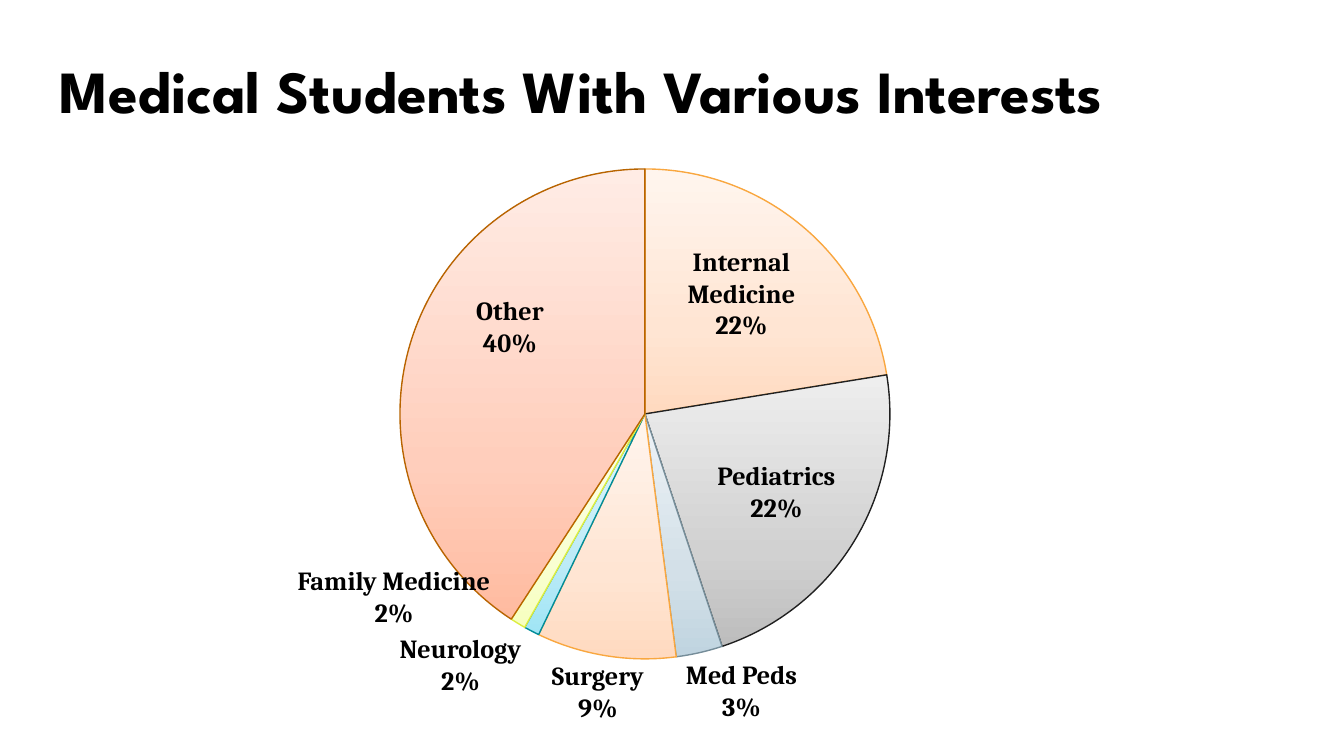
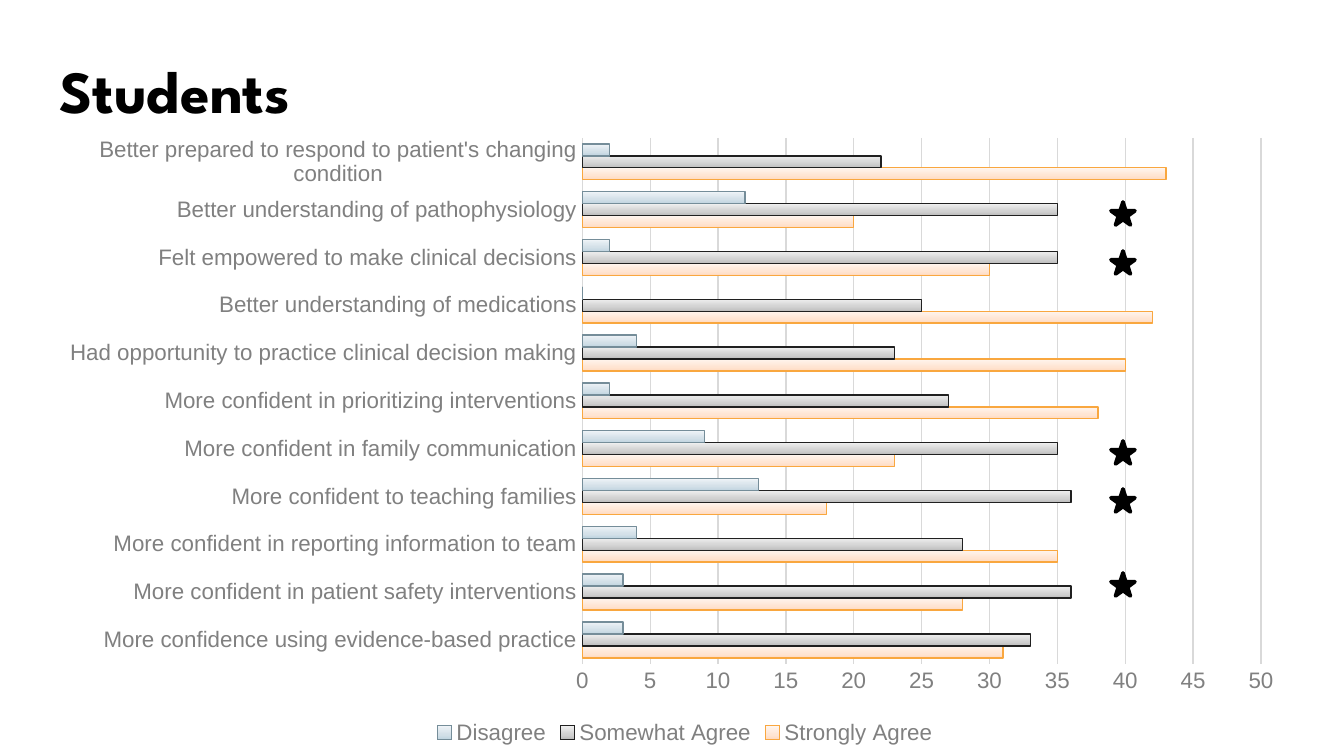
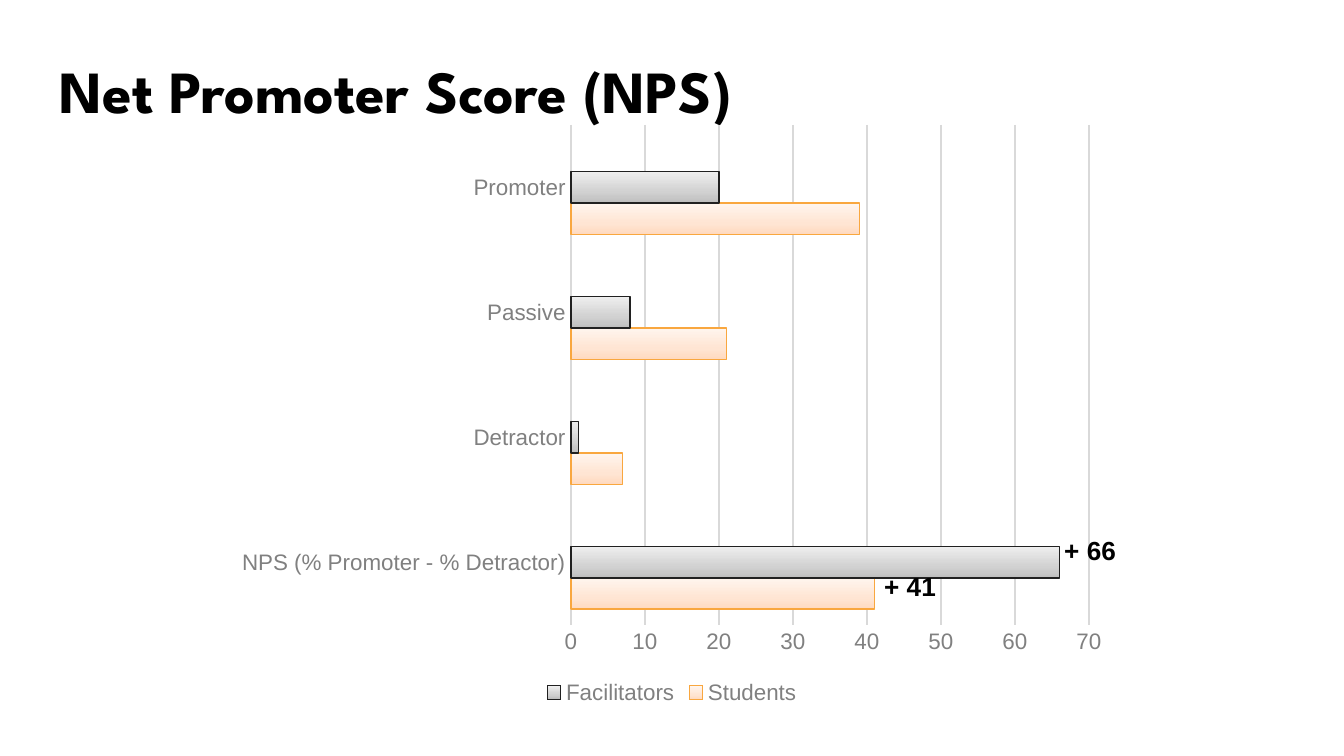
from copy import deepcopy
from dataclasses import dataclass
from typing import NamedTuple

from lxml import etree
from pptx import Presentation
from pptx import util as u
from pptx.chart.data import CategoryChartData
from pptx.dml.color import RGBColor
from pptx.enum import chart as charts, shapes, text
from pptx.oxml.ns import qn

EMU_PER_PX = 914400 / 134.4


def px(length):
    return u.Emu(round(length * EMU_PER_PX))


def rgb(code):
    return RGBColor.from_string(code)


class Tint(NamedTuple):
    """Gradient colours from bottom to top, and the outline."""
    bottom: str
    middle: str
    top: str
    line: str


@dataclass(frozen=True)
class Theme:
    # Colours
    ink: str = "000000"
    axis_text: str = "808080"
    grid: str = "D9D9D9"
    orange: Tint = Tint("FFDAC0", "FFE5D3", "FFF5EE", "F9A73F")
    grey: Tint = Tint("BDBDBD", "D1D1D1", "EEEEEE", "202020")
    blue: Tint = Tint("C0D4E0", "D3E0E8", "EEF3F7", "758D99")
    teal: Tint = Tint("A0E5F5", "BEEBF7", "E5F8FD", "008C99")
    yellow: Tint = Tint("F7FFC0", "F9FFD3", "FDFFEE", "DDEE40")
    red: Tint = Tint("FFBBA0", "FFCEBC", "FFECE5", "B86400")
    # Fonts and sizes
    title_font: str = "League Spartan"
    label_font: str = "Cambria"
    chart_font: str = "Arial"
    title_size: int = 32
    label_size: int = 14
    axis_size: int = 12
    chart_size: int = 10
    thin: float = 0.75
    star_line: float = 2


class Slides:
    def __init__(self, theme):
        self.theme = theme
        self.deck = Presentation()
        self.deck.slide_width, self.deck.slide_height = px(1344), px(756)
        self.page = None

    def style(self, font, name, size, color, bold=False):
        font.name, font.size, font.bold = name, u.Pt(size), bold
        font.color.rgb = rgb(color)

    def new_page(self, title):
        self.page = self.deck.slides.add_slide(self.deck.slide_layouts[5])
        box = self.page.shapes.title
        box.left, box.top, box.width, box.height = map(px, (46, 40, 1298, 85))
        frame = box.text_frame
        frame.text = title
        frame.word_wrap = True
        frame.auto_size = text.MSO_AUTO_SIZE.NONE
        frame.vertical_anchor = text.MSO_ANCHOR.TOP
        frame.margin_left = frame.margin_right = u.Inches(0.1)
        frame.margin_top = frame.margin_bottom = u.Inches(0.1)
        para = frame.paragraphs[0]
        para.alignment = text.PP_ALIGN.LEFT
        self.style(para.font, self.theme.title_font, self.theme.title_size,
                   self.theme.ink, bold=True)

    def label(self, lines, area, font, align=text.PP_ALIGN.LEFT, wrap=False):
        box = self.page.shapes.add_textbox(*map(px, area))
        frame = box.text_frame
        frame.word_wrap = wrap
        frame.auto_size = text.MSO_AUTO_SIZE.SHAPE_TO_FIT_TEXT
        frame.text = "\n".join(lines)
        for para in frame.paragraphs:
            para.alignment = align
            self.style(para.font, font, self.theme.label_size,
                       self.theme.ink, bold=True)

    def star(self, left, top):
        star = self.page.shapes.add_shape(
            shapes.MSO_SHAPE.STAR_5_POINT, *map(px, (left, top, 24, 23)))
        star.shadow.inherit = False
        star.fill.solid()
        star.fill.fore_color.rgb = rgb(self.theme.ink)
        star.line.color.rgb = rgb(self.theme.ink)
        star.line.width = u.Pt(self.theme.star_line)

    def paint(self, look, tint):
        look.fill.gradient()
        look.fill.gradient_angle = 90
        stop_list = look.element.xpath(".//a:gsLst")[0]
        stop_list.append(deepcopy(stop_list[-1]))
        for stop, place, color in zip(look.fill.gradient_stops, (0, 0.35, 1), tint):
            stop.position = place
            stop.color.rgb = rgb(color)
        look.line.color.rgb = rgb(tint.line)
        look.line.width = u.Pt(self.theme.thin)

    def place_plot(self, chart, area, plot):
        """Fix the inner plot area, given in slide px, inside the chart."""
        left, top, width, height = area
        plot_area = chart.element.xpath(".//c:plotArea")[0]
        for old in plot_area.findall(qn("c:layout")):
            plot_area.remove(old)
        layout = etree.Element(qn("c:layout"))
        plot_area.insert(0, layout)
        manual = etree.SubElement(layout, qn("c:manualLayout"))
        values = {
            "layoutTarget": "inner", "xMode": "edge", "yMode": "edge",
            "x": (plot[0] - left) / width, "y": (plot[1] - top) / height,
            "w": plot[2] / width, "h": plot[3] / height,
        }
        for name, value in values.items():
            etree.SubElement(manual, qn(f"c:{name}")).set("val", str(value))

    def chart(self, kind, categories, series, area, plot):
        data = CategoryChartData()
        data.categories = categories
        for name, values in series:
            data.add_series(name, values)
        chart = self.page.shapes.add_chart(kind, *map(px, area), data).chart
        chart.has_title = False
        chart.has_legend = False
        self.style(chart.font, self.theme.chart_font, self.theme.chart_size,
                   self.theme.ink)
        self.place_plot(chart, area, plot)
        return chart

    def pie(self, values, tints, area, plot):
        names = [str(number) for number in range(1, len(values) + 1)]
        chart = self.chart(charts.XL_CHART_TYPE.PIE, names,
                           [("Series 1", values)], area, plot)
        chart.plots[0].vary_by_categories = True
        for index, tint in enumerate(tints):
            self.paint(chart.plots[0].series[0].points[index].format, tint)

    def bars(self, categories, series, area, plot, top_value, step):
        theme = self.theme
        chart = self.chart(charts.XL_CHART_TYPE.BAR_CLUSTERED, categories,
                           series, area, plot)
        bar_plot = chart.plots[0]
        bar_plot.gap_width = 100
        bar_plot.vary_by_categories = False
        for one, tint in zip(bar_plot.series, (theme.orange, theme.grey, theme.blue)):
            self.paint(one.format, tint)

        # Axes
        names, scale = chart.category_axis, chart.value_axis
        scale.minimum_scale, scale.maximum_scale = 0, top_value
        scale.major_unit = step
        scale.has_major_gridlines = True
        for line in (names.format.line, scale.major_gridlines.format.line):
            line.color.rgb = rgb(theme.grid)
            line.width = u.Pt(theme.thin)
        scale.format.line.fill.background()
        for axis in (names, scale):
            axis.major_tick_mark = charts.XL_TICK_MARK.NONE
            axis.minor_tick_mark = charts.XL_TICK_MARK.NONE

        # Legend
        chart.has_legend = True
        chart.legend.position = charts.XL_LEGEND_POSITION.BOTTOM
        chart.legend.include_in_layout = False
        for part in (names.tick_labels, scale.tick_labels, chart.legend):
            self.style(part.font, theme.chart_font, theme.axis_size,
                       theme.axis_text)
        return chart

    def hide_legend_entry(self, chart, index):
        entry = etree.Element(qn("c:legendEntry"))
        etree.SubElement(entry, qn("c:idx")).set("val", str(index))
        etree.SubElement(entry, qn("c:delete")).set("val", "1")
        chart.element.xpath(".//c:legendPos")[0].addnext(entry)


def interests(slides):
    theme = slides.theme
    slides.new_page("Medical Students With Various Interests")
    slides.pie(
        (22, 22, 3, 9, 1, 1, 40),
        (theme.orange, theme.grey, theme.blue, theme.orange,
         theme.teal, theme.yellow, theme.red),
        area=(267, 151, 755, 527), plot=(400, 169, 490, 490))
    slice_labels = [
        (("Internal", "Medicine", "22%"), (665, 239, 153, 109)),
        (("Pediatrics", "22%"), (694, 453, 165, 77)),
        (("Surgery", "9%"), (531, 653, 134, 77)),
        (("Med Peds", "3%"), (663, 652, 157, 77)),
        (("Neurology", "2%"), (376, 626, 169, 77)),
        (("Family Medicine", "2%"), (265, 558, 258, 77)),
        (("Other", "40%"), (457, 288, 106, 77)),
    ]
    for lines, area in slice_labels:
        slides.label(lines, area, theme.label_font, text.PP_ALIGN.CENTER,
                     wrap=lines[0] == "Family Medicine")


def student_answers(slides):
    slides.new_page("Students")
    statements = [
        "More confidence using evidence-based practice",
        "More confident in patient safety interventions",
        "More confident in reporting information to team",
        "More confident to teaching families",
        "More confident in family communication",
        "More confident in prioritizing interventions",
        "Had opportunity to practice clinical decision making",
        "Better understanding of medications",
        "Felt empowered to make clinical decisions",
        "Better understanding of pathophysiology",
        "Better prepared to respond to patient's changing condition",
    ]
    answers = [
        ("Strongly Agree", (31, 28, 35, 18, 23, 38, 40, 42, 30, 20, 43)),
        ("Somewhat Agree", (33, 36, 28, 36, 35, 27, 23, 25, 35, 35, 22)),
        ("Disagree", (3, 3, 4, 13, 9, 2, 4, 0, 2, 12, 2)),
    ]
    slides.bars(statements, answers, area=(70, 125, 1228, 625),
                plot=(581, 138, 680, 526), top_value=50, step=5)
    for top in (202, 251, 441, 489, 573):
        slides.star(1111, top)


def promoter_score(slides):
    slides.new_page("Net Promoter Score (NPS)")
    groups = ["NPS (% Promoter - % Detractor)", "Detractor", "Passive", "Promoter"]
    scores = [
        ("Students", (41, 7, 21, 39)),
        ("Facilitators", (66, 1, 8, 20)),
        ("Column1", (None,) * len(groups)),
    ]
    chart = slides.bars(groups, scores, area=(224, 113, 896, 597),
                        plot=(571, 125, 518, 500), top_value=70, step=10)
    slides.hide_legend_entry(chart, 0)
    for score, left, top in (("+ 41", 871, 564), ("+ 66", 1051, 528)):
        slides.label([score], (left, top, 79, 46), slides.theme.chart_font)


def main():
    slides = Slides(Theme())
    interests(slides)
    student_answers(slides)
    promoter_score(slides)
    slides.deck.save("out.pptx")


if __name__ == "__main__":
    main()
